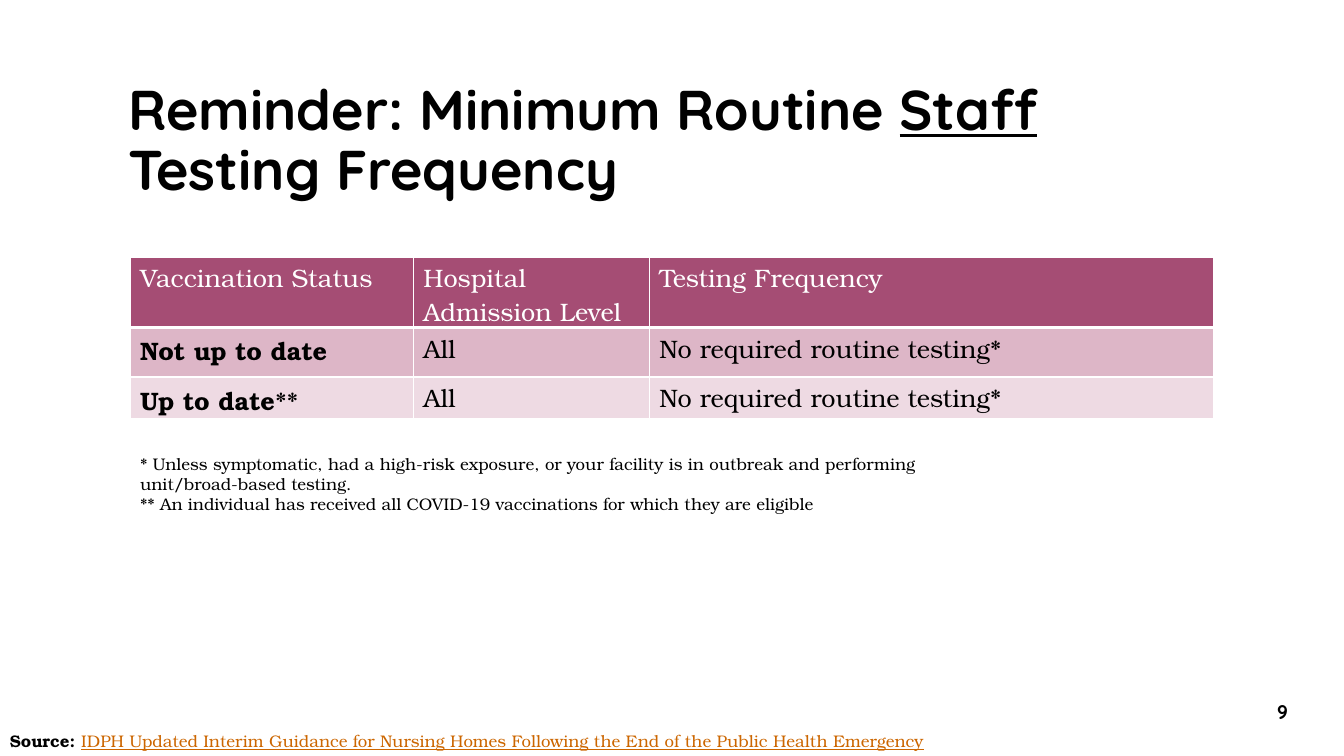
import dataclasses

import pptx
import pptx.dml.color
import pptx.enum.text
import pptx.oxml
import pptx.oxml.ns
import pptx.util

ANCHOR = pptx.enum.text.MSO_ANCHOR
ALIGN = pptx.enum.text.PP_ALIGN


@dataclasses.dataclass(frozen=True)
class Theme:
    heading: str = "Quicksand"
    body: str = "TeX Gyre Bonum"
    black: str = "000000"
    white: str = "FFFFFF"
    link: str = "CC6600"
    row_fills: tuple = ("A54D74", "DDB6C7", "EEDAE3")
    title_size: int = 40
    table_size: int = 18
    number_size: int = 14
    note_size: int = 12


def px(n):
    return pptx.util.Inches(n / 100)


def rgb(value):
    return pptx.dml.color.RGBColor.from_string(value)


def add_run(p, text, *, font, size, color, bold=False, underline=False):
    r = p.add_run()
    r.text = text
    r.font.name = font
    r.font.size = pptx.util.Pt(size)
    r.font.color.rgb = rgb(color)
    r.font.bold = bold
    r.font.underline = underline


class SlideBuilder:
    def __init__(self, prs, theme):
        self.theme = theme
        self.s = prs.slides.add_slide(prs.slide_layouts[5])
        self.s.background.fill.solid()
        self.s.background.fill.fore_color.rgb = rgb(theme.white)

    def place(self, sp, box):
        sp.left, sp.top, sp.width, sp.height = map(px, box)

    def title(self, box, runs):
        t = self.theme
        sp = self.s.shapes.title
        self.place(sp, box)
        tf = sp.text_frame
        tf.word_wrap = True
        tf.auto_size = pptx.enum.text.MSO_AUTO_SIZE.NONE
        tf.vertical_anchor = ANCHOR.MIDDLE
        p = tf.paragraphs[0]
        p.alignment = ALIGN.LEFT
        p.line_spacing = 0.9
        for text, underline in runs:
            add_run(p, text, font=t.heading, size=t.title_size, color=t.black,
                    bold=True, underline=underline)

    def text(self, box, paragraphs, anchor=ANCHOR.TOP, align=ALIGN.LEFT, **style):
        t = self.theme
        base = dict(font=t.body, size=t.note_size, color=t.black) | style
        tf = self.s.shapes.add_textbox(*map(px, box)).text_frame
        tf.word_wrap = True
        tf.vertical_anchor = anchor
        for i, runs in enumerate(paragraphs):
            p = tf.add_paragraph() if i else tf.paragraphs[0]
            p.alignment = align
            for text, extra in runs:
                add_run(p, text, **(base | extra))

    def border(self, cell, side, width):
        tcPr = cell._tc.get_or_add_tcPr()
        ns = pptx.oxml.ns.nsdecls("a")
        ln = pptx.oxml.parse_xml(
            f'<a:{side} {ns} w="{pptx.util.Pt(width)}"><a:solidFill>'
            f'<a:srgbClr val="{self.theme.white}"/></a:solidFill></a:{side}>')
        tcPr.append(ln)

    def cell(self, cell, text, row, bold):
        t = self.theme
        cell.margin_left = cell.margin_right = px(10)
        cell.margin_top, cell.margin_bottom = px(4), 0
        for side in ("lnL", "lnR", "lnT", "lnB"):
            self.border(cell, side, 3 if row == 0 and side == "lnB" else 1)
        cell.fill.solid()
        cell.fill.fore_color.rgb = rgb(t.row_fills[row])
        add_run(cell.text_frame.paragraphs[0], text, font=t.body, size=t.table_size,
                color=t.black if row else t.white, bold=bold)

    def table(self, left, top, widths, heights, rows):
        box = (left, top, sum(widths), sum(heights))
        table = self.s.shapes.add_table(len(rows), len(widths), *map(px, box)).table
        for column, width in zip(table.columns, widths):
            column.width = px(width)
        for i, (height, texts) in enumerate(zip(heights, rows)):
            table.rows[i].height = px(height)
            for j, text in enumerate(texts):
                self.cell(table.cell(i, j), text, i, bold=i > 0 and j == 0)


def main():
    prs = pptx.Presentation()
    prs.slide_width, prs.slide_height = px(1333), px(750)
    theme = Theme()
    slide = SlideBuilder(prs, theme)

    slide.title((117, 53, 1100, 176), [
        ("Reminder: Minimum Routine ", False),
        ("Staff", True),
        (" Testing Frequency", False),
    ])
    slide.text((129, 445, 889, 141), [
        [("* Unless symptomatic, had a high-risk exposure, or your facility is in "
          "outbreak and performing unit/broad-based testing.", {})],
        [("** An individual has received all COVID-19 vaccinations for which they "
          "are eligible", {})],
    ])
    slide.table(129, 255, (281, 234, 560), (70, 49, 41), [
        ("Vaccination Status", "Hospital Admission Level", "Testing Frequency"),
        ("Not up to date", "All", "No required routine testing*"),
        ("Up to date**", "All", "No required routine testing*"),
    ])
    slide.text((1237, 686, 70, 40), [[("9", {})]], anchor=ANCHOR.MIDDLE,
               align=ALIGN.CENTER, font=theme.heading, size=theme.number_size, bold=True)
    slide.text((0, 720, 1232, 30), [[
        ("Source: ", dict(bold=True)),
        ("IDPH Updated Interim Guidance for Nursing Homes Following the End of the "
         "Public Health Emergency", dict(color=theme.link, underline=True)),
    ]])
    prs.save("out.pptx")


if __name__ == "__main__":
    main()
